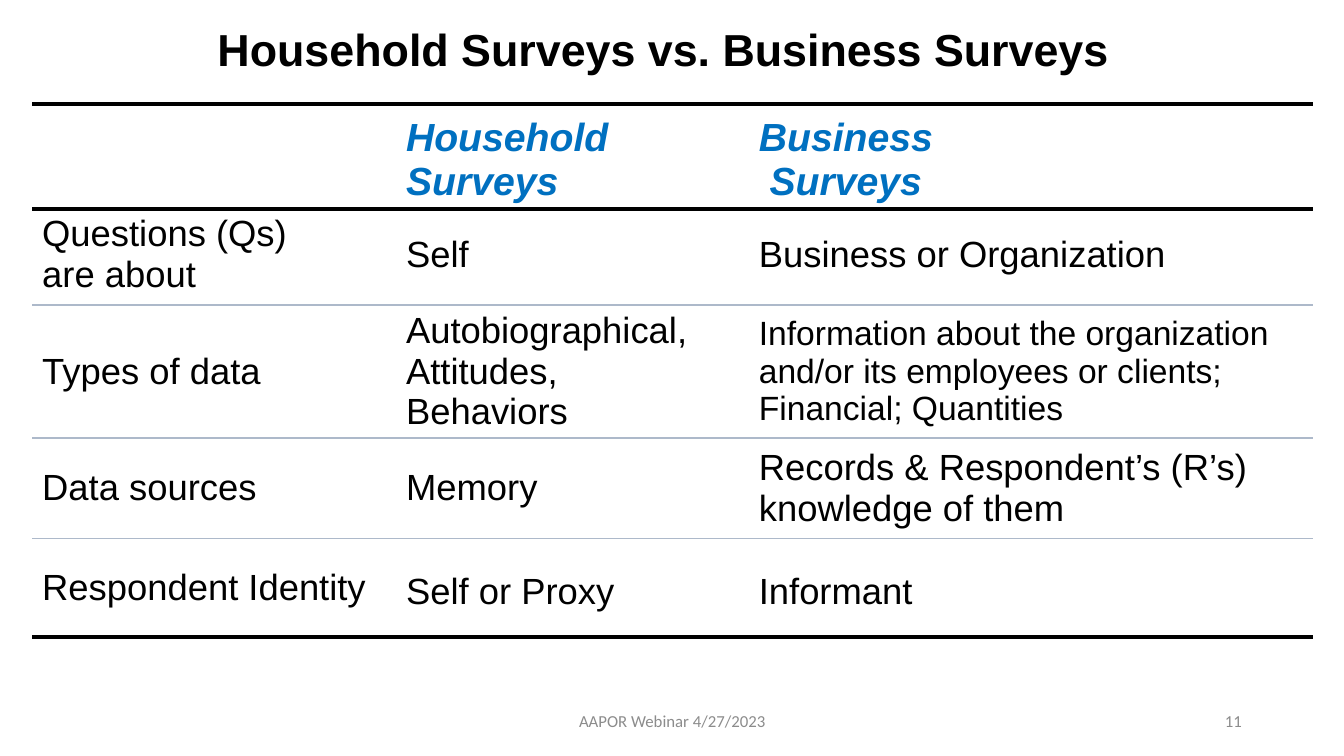
from pptx import Presentation, util as u
from pptx.dml import color
from pptx.enum import text
from pptx.oxml import parse_xml
from pptx.oxml.ns import nsdecls

BLACK, BLUE, GREY, RULE = "000000", "0070C0", "8C8C8C", "ADB9CA"
MIDDLE, BOTTOM = text.MSO_ANCHOR.MIDDLE, text.MSO_ANCHOR.BOTTOM

COLUMN_WIDTHS = (9.17, 8.89, 14.22)
ROW_HEIGHTS = (2.64, 2.42, 3.35, 2.53, 2.49)
# One list of paragraphs per cell
ROWS = (
    ([], ["Household", "Surveys"], ["Business", "Surveys"]),
    (["Questions (Qs)", "are about"], ["Self"], ["Business or Organization"]),
    (["Types of data"], ["Autobiographical,", "Attitudes,", "Behaviors"],
     ["Information about the organization and/or its employees or clients; "
      "Financial; Quantities"]),
    (["Data sources"], ["Memory"],
     ["Records & Respondent’s (R’s) knowledge of them"]),
    (["Respondent Identity"], ["Self or Proxy"], ["Informant"]),
)


def rgb(value):
    return color.RGBColor.from_string(value)


def write(frame, lines, size, fill, name="Arial", bold=False, italic=False,
          align=text.PP_ALIGN.LEFT):
    for index, line in enumerate(lines):
        para = frame.paragraphs[0] if index == 0 else frame.add_paragraph()
        para.alignment = align
        span = para.add_run()
        span.text = line
        font = span.font
        font.name, font.size = name, u.Pt(size)
        font.bold, font.italic = bold, italic
        font.color.rgb = rgb(fill)


def set_borders(cell, top, bottom):
    """Draw the horizontal rules of a cell; its sides stay open."""
    properties = cell._tc.get_or_add_tcPr()
    edges = (("lnL", None), ("lnR", None), ("lnT", top), ("lnB", bottom))
    for index, (tag, rule) in enumerate(edges):
        fill, width = "<a:noFill/>", 0
        if rule:
            value, points = rule
            width = u.Pt(points)
            fill = f'<a:solidFill><a:srgbClr val="{value}"/></a:solidFill>'
        properties.insert(index, parse_xml(
            f'<a:{tag} {nsdecls("a")} w="{width}">{fill}</a:{tag}>'))


def add_title(page, left, top, width, height):
    title = page.shapes.title
    title.left, title.top = u.Cm(left), u.Cm(top)
    title.width, title.height = u.Cm(width), u.Cm(height)
    frame = title.text_frame
    frame.auto_size = text.MSO_AUTO_SIZE.NONE
    frame.vertical_anchor = text.MSO_ANCHOR.TOP
    write(frame, ["Household Surveys vs. Business Surveys"], 32, BLACK,
          bold=True, align=text.PP_ALIGN.CENTER)


def add_comparison(page, left, top, width, height):
    table = page.shapes.add_table(
        len(ROWS), len(COLUMN_WIDTHS),
        u.Cm(left), u.Cm(top), u.Cm(width), u.Cm(height)).table
    table.first_row = table.horz_banding = False
    for column, share in zip(table.columns, COLUMN_WIDTHS):
        column.width = u.Cm(width * share / sum(COLUMN_WIDTHS))
    for row, share in zip(table.rows, ROW_HEIGHTS):
        row.height = u.Cm(height * share / sum(ROW_HEIGHTS))

    heavy, light = (BLACK, 3), (RULE, 1)
    last = len(ROWS) - 1
    for r, row in enumerate(ROWS):
        for c, lines in enumerate(row):
            cell = table.cell(r, c)
            cell.fill.background()
            set_borders(cell, heavy if r < 2 else light,
                        heavy if r in (0, last) else light)
            cell.vertical_anchor = BOTTOM if r == 0 else MIDDLE
            if r == 0:
                write(cell.text_frame, lines, 28, BLUE, bold=True, italic=True)
            else:
                write(cell.text_frame, lines, 24 if (r, c) == (2, 2) else 26, BLACK)
            if r == 1:
                cell.margin_bottom = u.Cm(0.25)
            if r == last and c > 0:
                cell.vertical_anchor = BOTTOM
                cell.margin_bottom = u.Cm(0.64)

    # Second line of the last heading is set slightly in
    heading = table.cell(0, 2).text_frame.paragraphs[1]
    heading._p.get_or_add_pPr().set("marL", str(u.Cm(0.27)))


def add_footer(page, left, top, width, height, line, align):
    box = page.shapes.add_textbox(u.Cm(left), u.Cm(top), u.Cm(width), u.Cm(height))
    frame = box.text_frame
    frame.word_wrap = True
    frame.vertical_anchor = MIDDLE
    write(frame, [line], 12, GREY, name="Calibri", align=align)


def main():
    deck = Presentation()
    deck.slide_width, deck.slide_height = u.Cm(33.87), u.Cm(19.05)
    page = deck.slides.add_slide(deck.slide_layouts[5])
    add_title(page, 4.24, 0.43, 24.97, 2.29)
    add_comparison(page, 0.81, 2.62, sum(COLUMN_WIDTHS), sum(ROW_HEIGHTS))
    # Footer and slide number
    add_footer(page, 11.23, 17.65, 11.43, 1.02, "AAPOR Webinar 4/27/2023",
               text.PP_ALIGN.CENTER)
    add_footer(page, 23.93, 17.65, 7.62, 1.02, "11", text.PP_ALIGN.RIGHT)
    deck.save("out.pptx")


if __name__ == "__main__":
    main()
